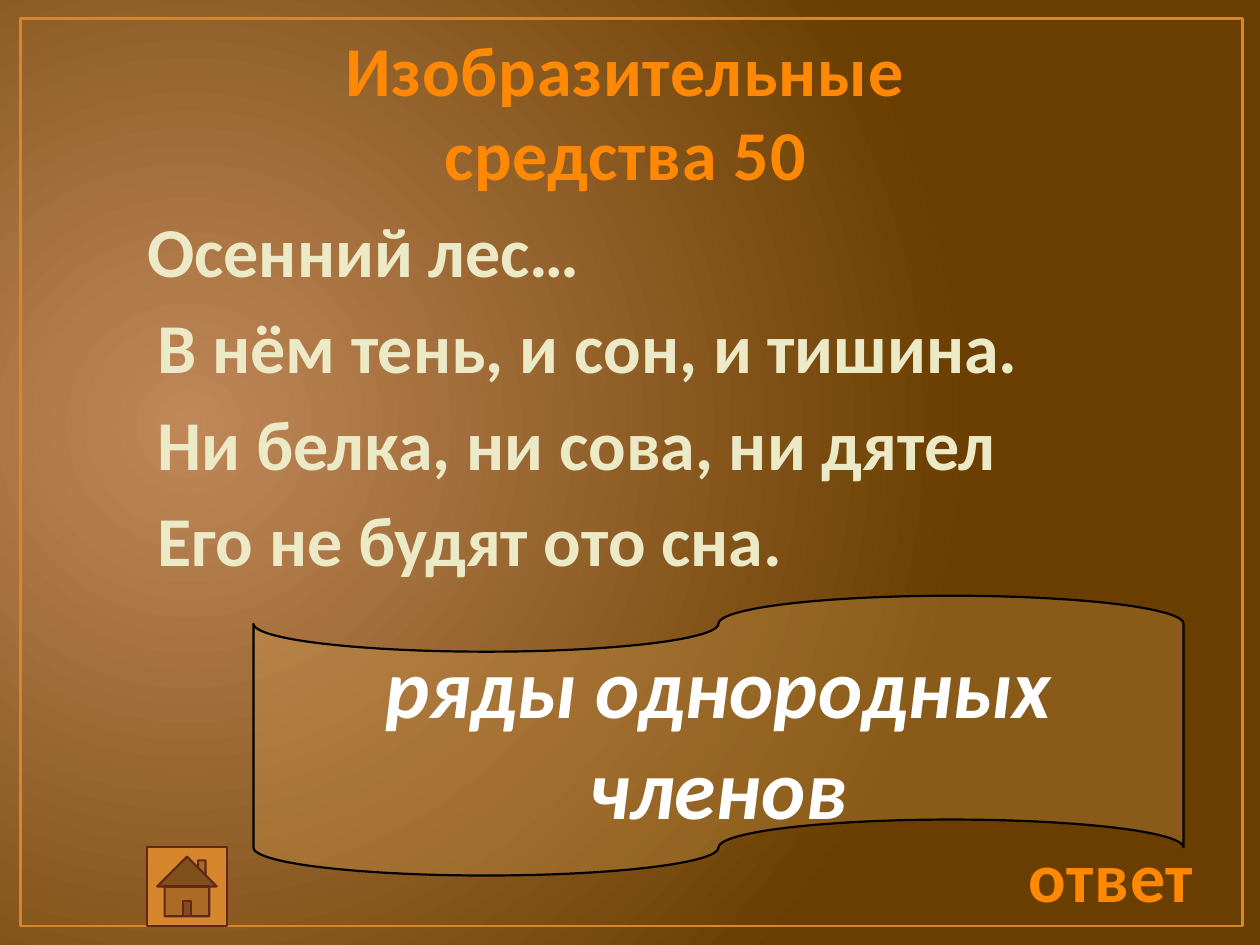
from dataclasses import dataclass

from lxml import etree
from pptx import Presentation
from pptx.dml.color import RGBColor
from pptx.enum.shapes import MSO_SHAPE
from pptx.enum.text import MSO_ANCHOR, PP_ALIGN
from pptx.oxml.ns import qn
from pptx.util import Cm, Pt

FRAME = MSO_SHAPE.RECTANGLE
HOME = MSO_SHAPE.ACTION_BUTTON_HOME
TAPE = MSO_SHAPE.FLOWCHART_PUNCHED_TAPE
LEFT, CENTER = PP_ALIGN.LEFT, PP_ALIGN.CENTER
TOP, MIDDLE = MSO_ANCHOR.TOP, MSO_ANCHOR.MIDDLE

FONT = "Calibri"
GLOW = RGBColor(0xC0, 0x87, 0x59)
BROWN = RGBColor(0x69, 0x3E, 0x00)
COPPER = RGBColor(0xD6, 0x86, 0x2D)
MAROON = RGBColor(0x64, 0x28, 0x1B)
SAND = RGBColor(0xDB, 0xA4, 0x55)
ORANGE = RGBColor(0xFF, 0x88, 0x04)
CREAM = RGBColor(0xEC, 0xE9, 0xC6)
WHITE = RGBColor(0xFF, 0xFF, 0xFF)
BLACK = RGBColor(0x00, 0x00, 0x00)


@dataclass(frozen=True)
class Box:
    left: float
    top: float
    width: float
    height: float

    def lengths(self) -> tuple:
        return Cm(self.left), Cm(self.top), Cm(self.width), Cm(self.height)


@dataclass(frozen=True)
class Verse:
    text: str
    indent: float


VERSES = [
    Verse("Осенний лес…", 1.42),
    Verse("В нём тень, и сон, и тишина.", 1.63),
    Verse("Ни белка, ни сова, ни дятел", 1.63),
    Verse("Его не будят ото сна.", 1.63),
]


def set_background(slide) -> None:
    fill = slide.background.fill
    fill.gradient()
    for stop, color, position in zip(fill.gradient_stops, (GLOW, BROWN), (0, 1)):
        stop.color.rgb = color
        stop.position = position
    # Turn the linear gradient into a circular one
    gradient = slide.element.find(".//" + qn("a:gradFill"))
    gradient.remove(gradient.find(qn("a:lin")))
    circle = etree.SubElement(gradient, qn("a:path"), path="circle")
    etree.SubElement(circle, qn("a:fillToRect"),
                     l="15000", t="50000", r="85000", b="60000")


def add_figure(slide, kind, box: Box, line: RGBColor, line_width: float,
               fill: RGBColor | None = None, opacity: int = 100):
    shape = slide.shapes.add_shape(kind, *box.lengths())
    shape.shadow.inherit = False
    shape.line.color.rgb = line
    shape.line.width = Pt(line_width)
    if fill is None:
        shape.fill.background()
    else:
        shape.fill.solid()
        shape.fill.fore_color.rgb = fill
        if opacity < 100:
            color = shape.element.spPr.find(qn("a:solidFill"))[0]
            etree.SubElement(color, qn("a:alpha"), val=str(opacity * 1000))
    return shape


def add_text_box(slide, box: Box, wrap: bool = True):
    text_frame = slide.shapes.add_textbox(*box.lengths()).text_frame
    text_frame.word_wrap = wrap
    return text_frame


def write(paragraph, text: str, *, color: RGBColor, size: int = 40,
          align=CENTER, italic: bool = False, spacing: float = 0,
          indent: float = 0, before: float = 0) -> None:
    paragraph.alignment = align
    paragraph.space_before = Pt(before)
    if indent:
        properties = paragraph._p.get_or_add_pPr()
        properties.set("marL", str(Cm(indent)))
        properties.set("indent", "0")
    run = paragraph.add_run()
    run.text = text
    run.font.name = FONT
    run.font.size = Pt(size)
    run.font.bold = True
    run.font.italic = italic
    run.font.color.rgb = color
    if spacing:
        run._r.get_or_add_rPr().set("spc", str(int(spacing * 100)))


def main() -> None:
    presentation = Presentation()
    presentation.slide_width, presentation.slide_height = Cm(25.4), Cm(19.05)
    slide = presentation.slides.add_slide(presentation.slide_layouts[6])

    # Background and frame
    set_background(slide)
    add_figure(slide, FRAME, Box(0.41, 0.38, 24.64, 18.29), COPPER, 1.5)

    # Title
    title = add_text_box(slide, Box(4.17, 0.41, 16.87, 3.68))
    write(title.paragraphs[0], "Изобразительные средства 50",
          color=ORANGE, spacing=0.5)

    # Home button
    add_figure(slide, HOME, Box(2.97, 17.07, 1.6, 1.6), MAROON, 1.25, COPPER)

    # Poem
    poem = add_text_box(slide, Box(1.3, 4.06, 20.52, 12.24))
    poem.vertical_anchor = TOP
    for index, verse in enumerate(VERSES):
        paragraph = poem.add_paragraph() if index else poem.paragraphs[0]
        write(paragraph, verse.text, color=CREAM, align=LEFT,
              indent=verse.indent, before=7 if index else 0)

    # Answer label
    label = add_text_box(slide, Box(20.45, 16.66, 3.89, 1.96), wrap=False)
    write(label.paragraphs[0], "ответ", color=ORANGE, spacing=0.5)

    # Answer on a tape
    tape = add_figure(slide, TAPE, Box(5.11, 12.01, 18.75, 5.64),
                      BLACK, 1.25, SAND, opacity=29)
    tape.text_frame.word_wrap = True
    tape.text_frame.vertical_anchor = MIDDLE
    write(tape.text_frame.paragraphs[0], "ряды однородных членов",
          color=WHITE, size=48, italic=True)

    presentation.save("out.pptx")


if __name__ == "__main__":
    main()
